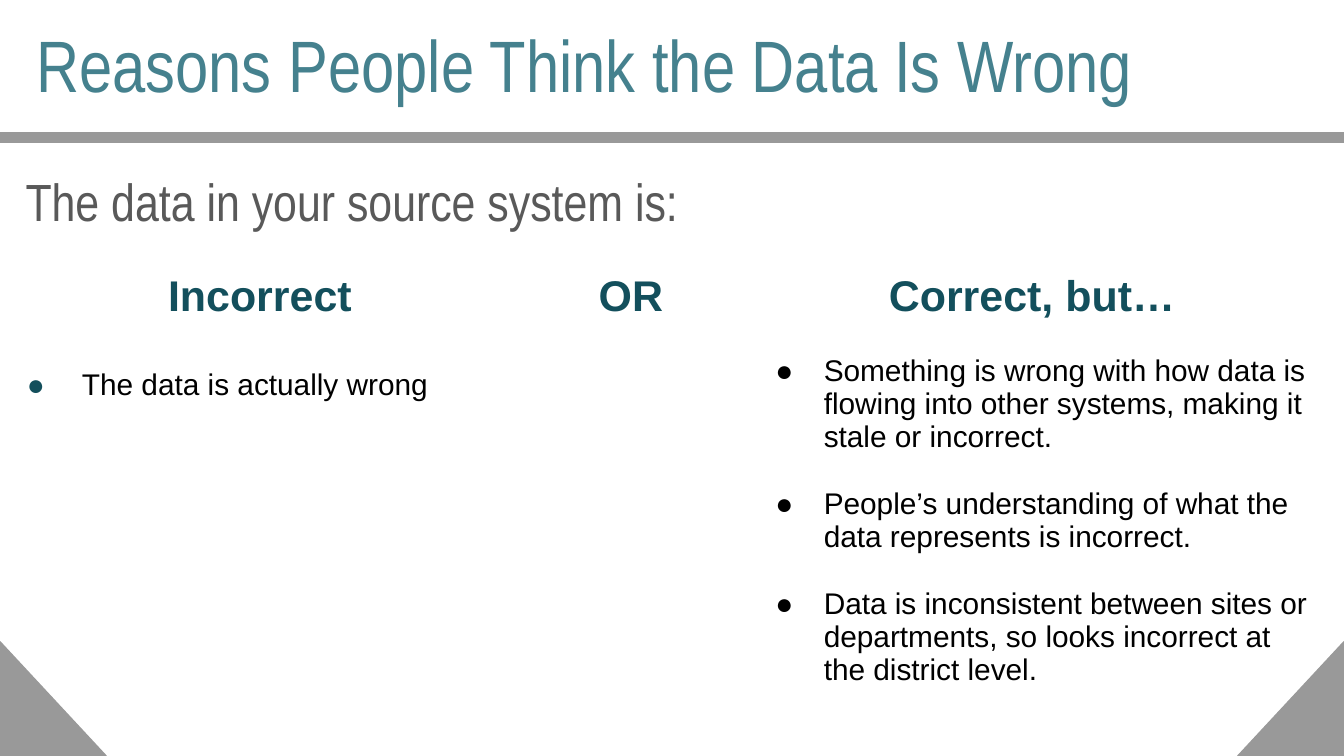
import dataclasses
import typing

import pptx
import pptx.dml.color
import pptx.enum.shapes
import pptx.enum.text
import pptx.oxml.ns
import pptx.util
from lxml import etree

Inches = pptx.util.Inches
Pt = pptx.util.Pt
ALIGN = pptx.enum.text.PP_ALIGN
ANCHOR = pptx.enum.text.MSO_ANCHOR
SHAPE = pptx.enum.shapes.MSO_SHAPE


@dataclasses.dataclass(frozen=True)
class Theme:
    title: str = "45818E"
    lead: str = "595959"
    head: str = "134F5C"
    text: str = "000000"
    trim: str = "999999"
    sans: str = "Arial"
    slim: str = "Arial Narrow"
    title_size: float = 39
    lead_size: float = 28
    head_size: float = 23
    text_size: float = 16


@dataclasses.dataclass(frozen=True)
class Box:
    left: float
    top: float
    width: float
    height: float

    def place(self) -> dict[str, int]:
        return {key: Inches(size) for key, size in dataclasses.asdict(self).items()}


@dataclasses.dataclass(frozen=True)
class Trim:
    kind: typing.Any
    box: Box
    flip: bool = False


@dataclasses.dataclass(frozen=True)
class Column:
    width: float
    head: str
    points: tuple[str, ...] = ()
    gap: float = 18
    hang: float = 0.36
    dot: str = "000000"


THEME = Theme()
WIDE = 10
HIGH = WIDE * 9 / 16
SIDE, RISE = 0.79, 0.85
PLAIN = "{2D5ABB26-0587-4C30-8999-92F81FD0307C}"

TRIMS = (
    Trim(SHAPE.RECTANGLE, Box(0, 0.99, WIDE, 0.07)),
    Trim(SHAPE.RIGHT_TRIANGLE, Box(0, HIGH - RISE, SIDE, RISE)),
    Trim(SHAPE.RIGHT_TRIANGLE, Box(WIDE - SIDE, HIGH - RISE, SIDE, RISE), True),
)

COLUMNS = (
    Column(3.85, "Incorrect", ("The data is actually wrong",), 25.5, 0.41, THEME.head),
    Column(1.67, "OR"),
    Column(4.3, "Correct, but…", (
        "Something is wrong with how data is flowing into other systems, making it stale or incorrect.",
        "People’s understanding of what the data represents is incorrect.",
        "Data is inconsistent between sites or departments, so looks incorrect at the district level.",
    )),
)


def apply(item: typing.Any, form: dict[str, typing.Any]) -> None:
    for key, value in form.items():
        setattr(item, key, value)


def tint(code: str) -> pptx.dml.color.RGBColor:
    return pptx.dml.color.RGBColor.from_string(code)


def margins(item: typing.Any) -> None:
    apply(item, {f"margin_{side}": Inches(0.1) for side in ("left", "top", "right", "bottom")})


def write(para: typing.Any, text: str, name: str, size: float, hue: str, bold: bool = False) -> None:
    run = para.add_run()
    run.text = text
    apply(run.font, {"name": name, "size": Pt(size), "bold": bold})
    run.font.color.rgb = tint(hue)


def bullet(para: typing.Any, hang: float, hue: str) -> None:
    props = para._p.get_or_add_pPr()
    props.set("marL", str(Inches(0.5)))
    props.set("indent", str(-Inches(hang)))
    shade = etree.SubElement(props, pptx.oxml.ns.qn("a:buClr"))
    etree.SubElement(shade, pptx.oxml.ns.qn("a:srgbClr"), val=hue)
    etree.SubElement(props, pptx.oxml.ns.qn("a:buFont"), typeface=THEME.sans)
    etree.SubElement(props, pptx.oxml.ns.qn("a:buChar"), char="●")


def fill_holder(holder: typing.Any, box: Box, anchor: typing.Any, text: str, size: float, hue: str) -> typing.Any:
    apply(holder, box.place())
    frame = holder.text_frame
    margins(frame)
    apply(frame, {
        "word_wrap": True,
        "auto_size": pptx.enum.text.MSO_AUTO_SIZE.NONE,
        "vertical_anchor": anchor,
    })
    para = frame.paragraphs[0]
    apply(para, {"alignment": ALIGN.LEFT, "space_before": Pt(0)})
    write(para, text, THEME.slim, size, hue)
    return para


def draw_trim(slide: typing.Any, trim: Trim) -> None:
    shape = slide.shapes.add_shape(trim.kind, **trim.box.place())
    shape.shadow.inherit = False
    shape.fill.solid()
    shape.fill.fore_color.rgb = tint(THEME.trim)
    shape.line.color.rgb = tint(THEME.trim)
    shape.line.width = Pt(0.75)
    if trim.flip:
        shape._element.spPr.xfrm.set("flipH", "1")


def fill_cell(cell: typing.Any, column: Column) -> None:
    cell.fill.background()
    margins(cell)
    cell.vertical_anchor = ANCHOR.TOP
    frame = cell.text_frame
    head = frame.paragraphs[0]
    head.alignment = ALIGN.CENTER
    write(head, column.head, THEME.sans, THEME.head_size, THEME.head, True)
    for point in column.points:
        para = frame.add_paragraph()
        bullet(para, column.hang, column.dot)
        apply(para, {"alignment": ALIGN.LEFT, "space_before": Pt(column.gap)})
        write(para, point, THEME.sans, THEME.text_size, THEME.text)


def draw_table(slide: typing.Any, columns: tuple[Column, ...]) -> None:
    box = Box(0.01, 1.93, sum(column.width for column in columns), 3.42)
    table = slide.shapes.add_table(1, len(columns), **box.place()).table
    apply(table, {"first_row": False, "horz_banding": False})
    table._tbl.tblPr.find(pptx.oxml.ns.qn("a:tableStyleId")).text = PLAIN
    for place, column in enumerate(columns):
        table.columns[place].width = Inches(column.width)
        fill_cell(table.cell(0, place), column)


def main() -> None:
    deck = pptx.Presentation()
    apply(deck, {"slide_width": Inches(WIDE), "slide_height": Inches(HIGH)})
    slide = deck.slides.add_slide(deck.slide_layouts[1])
    title, body = slide.placeholders
    fill_holder(title, Box(0.17, 0.05, 9.36, 0.85), ANCHOR.BOTTOM,
                "Reasons People Think the Data Is Wrong", THEME.title_size, THEME.title)
    lead = fill_holder(body, Box(0.09, 1.09, 9.32, 3.74), ANCHOR.TOP,
                       "The data in your source system is:", THEME.lead_size, THEME.lead)
    props = lead._p.get_or_add_pPr()
    for key in ("marL", "indent"):
        props.set(key, "0")
    etree.SubElement(props, pptx.oxml.ns.qn("a:buNone"))
    apply(lead, {"line_spacing": 1.15, "space_after": Pt(12)})
    for trim in TRIMS:
        draw_trim(slide, trim)
    draw_table(slide, COLUMNS)
    deck.save("out.pptx")


if __name__ == "__main__":
    main()
